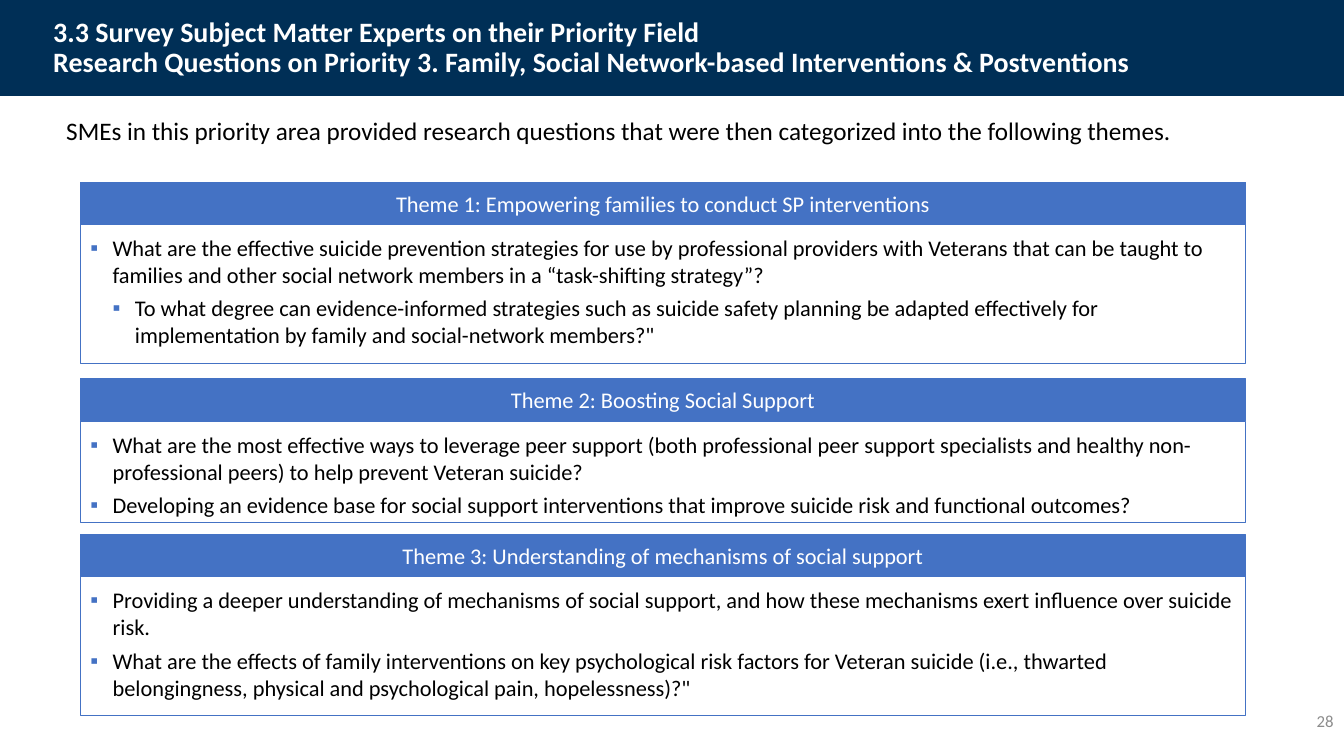
from dataclasses import dataclass

from lxml import etree
from pptx import Presentation
from pptx.dml.color import RGBColor
from pptx.enum import shapes, text
from pptx.oxml.ns import qn
from pptx.util import Cm, Pt


@dataclass(frozen=True)
class Theme:
    font: str = "Calibri"
    navy: RGBColor = RGBColor(0x00, 0x2F, 0x56)
    blue: RGBColor = RGBColor(0x44, 0x72, 0xC4)
    white: RGBColor = RGBColor(0xFF, 0xFF, 0xFF)
    black: RGBColor = RGBColor(0, 0, 0)
    grey: RGBColor = RGBColor(0x8C, 0x8C, 0x8C)
    title_size: Pt = Pt(20)
    intro_size: Pt = Pt(18)
    body_size: Pt = Pt(16)
    number_size: Pt = Pt(12)


THEME = Theme()
PANEL_LEFT, PANEL_WIDTH = Cm(2.03), Cm(29.36)
HEADER_HEIGHT = Cm(1.06)
INSET = Cm(0.25)
BULLET_INDENT = Cm(0.56)

# Each theme: top and body height in cm, heading, (level, question) pairs
THEMES = [
    (4.59, 3.51, "Theme 1: Empowering families to conduct SP interventions", [
        (1, "What are the effective suicide prevention strategies for use by professional providers with "
            "Veterans that can be taught to families and other social network members in a "
            "“task-shifting strategy”?"),
        (2, "To what degree can evidence-informed strategies such as suicide safety planning be adapted "
            "effectively for implementation by family and social-network members?\""),
    ]),
    (9.55, 2.57, "Theme 2: Boosting Social Support", [
        (1, "What are the most effective ways to leverage peer support (both professional peer support "
            "specialists and healthy non-professional peers) to help prevent Veteran suicide?"),
        (1, "Developing an evidence base for social support interventions that improve suicide risk and "
            "functional outcomes?"),
    ]),
    (13.47, 3.51, "Theme 3: Understanding of mechanisms of social support", [
        (1, "Providing a deeper understanding of mechanisms of social support, and how these mechanisms "
            "exert influence over suicide risk."),
        (1, "What are the effects of family interventions on key psychological risk factors for Veteran "
            "suicide (i.e., thwarted belongingness, physical and psychological pain, hopelessness)?\""),
    ]),
]


def style_paragraph(paragraph, size, color, align=text.PP_ALIGN.LEFT, bold=False):
    paragraph.alignment = align
    font = paragraph.font
    font.name, font.size, font.bold = THEME.font, size, bold
    font.color.rgb = color


def add_rectangle(slide, left, top, width, height, fill, line=None):
    shape = slide.shapes.add_shape(shapes.MSO_SHAPE.RECTANGLE, left, top, width, height)
    shape.shadow.inherit = False
    shape.fill.solid()
    shape.fill.fore_color.rgb = fill
    if line is None:
        shape.line.fill.background()
    else:
        shape.line.color.rgb = line
        shape.line.width = Pt(0.75)
    return shape


def add_label(slide, left, top, width, height, words, size, color, anchor=text.MSO_ANCHOR.MIDDLE, **style):
    frame = slide.shapes.add_textbox(left, top, width, height).text_frame
    frame.word_wrap = True
    frame.vertical_anchor = anchor
    paragraph = frame.paragraphs[0]
    paragraph.text = words
    style_paragraph(paragraph, size, color, **style)
    return paragraph


def add_bullet(paragraph, level):
    properties = paragraph._p.get_or_add_pPr()
    properties.set("marL", str(BULLET_INDENT * level))
    properties.set("indent", str(-BULLET_INDENT))
    color = etree.SubElement(properties, qn("a:buClr"))
    etree.SubElement(color, qn("a:srgbClr"), val=str(THEME.blue))
    etree.SubElement(properties, qn("a:buFont"), typeface="Arial")
    etree.SubElement(properties, qn("a:buChar"), char="▪")


def add_questions(shape, questions):
    frame = shape.text_frame
    frame.word_wrap = True
    frame.vertical_anchor = text.MSO_ANCHOR.TOP
    frame.margin_left = frame.margin_right = frame.margin_top = frame.margin_bottom = INSET
    for index, (level, question) in enumerate(questions):
        paragraph = frame.add_paragraph() if index else frame.paragraphs[0]
        paragraph.text = question
        paragraph.level = level
        add_bullet(paragraph, level)
        paragraph.space_before = Pt(4.8 if index else 0)
        style_paragraph(paragraph, THEME.body_size, THEME.black)


def add_theme_panel(slide, top, body_height, heading, questions):
    """Add a bordered list of questions under a filled heading bar."""
    body = add_rectangle(slide, PANEL_LEFT, top + HEADER_HEIGHT, PANEL_WIDTH, body_height,
                         THEME.white, THEME.blue)
    add_questions(body, questions)
    header = add_rectangle(slide, PANEL_LEFT, top, PANEL_WIDTH, HEADER_HEIGHT, THEME.blue, THEME.blue)
    frame = header.text_frame
    frame.word_wrap = True
    frame.vertical_anchor = text.MSO_ANCHOR.MIDDLE
    frame.text = heading
    style_paragraph(frame.paragraphs[0], THEME.body_size, THEME.white, text.PP_ALIGN.CENTER)


def main():
    presentation = Presentation()
    presentation.slide_width, presentation.slide_height = Cm(33.87), Cm(19.05)
    slide = presentation.slides.add_slide(presentation.slide_layouts[6])

    add_rectangle(slide, 0, 0, presentation.slide_width, Cm(2.42), THEME.navy)
    title = add_label(slide, Cm(1.09), Cm(0.28), Cm(31.55), Cm(1.88),
                      "3.3 Survey Subject Matter Experts on their Priority Field\n"
                      "Research Questions on Priority 3. Family, Social Network-based Interventions & Postventions",
                      THEME.title_size, THEME.white, bold=True)
    title.line_spacing = 0.9
    add_label(slide, Cm(26.24), Cm(17.65), Cm(7.62), Cm(1.02), "28",
              THEME.number_size, THEME.grey, align=text.PP_ALIGN.RIGHT)

    for top, body_height, heading, questions in THEMES:
        add_theme_panel(slide, Cm(top), Cm(body_height), heading, questions)

    add_label(slide, Cm(1.42), Cm(2.77), Cm(31.01), Cm(1.02),
              "SMEs in this priority area provided research questions that were then categorized into "
              "the following themes.",
              THEME.intro_size, THEME.black, anchor=text.MSO_ANCHOR.TOP)

    presentation.save("out.pptx")


if __name__ == "__main__":
    main()
